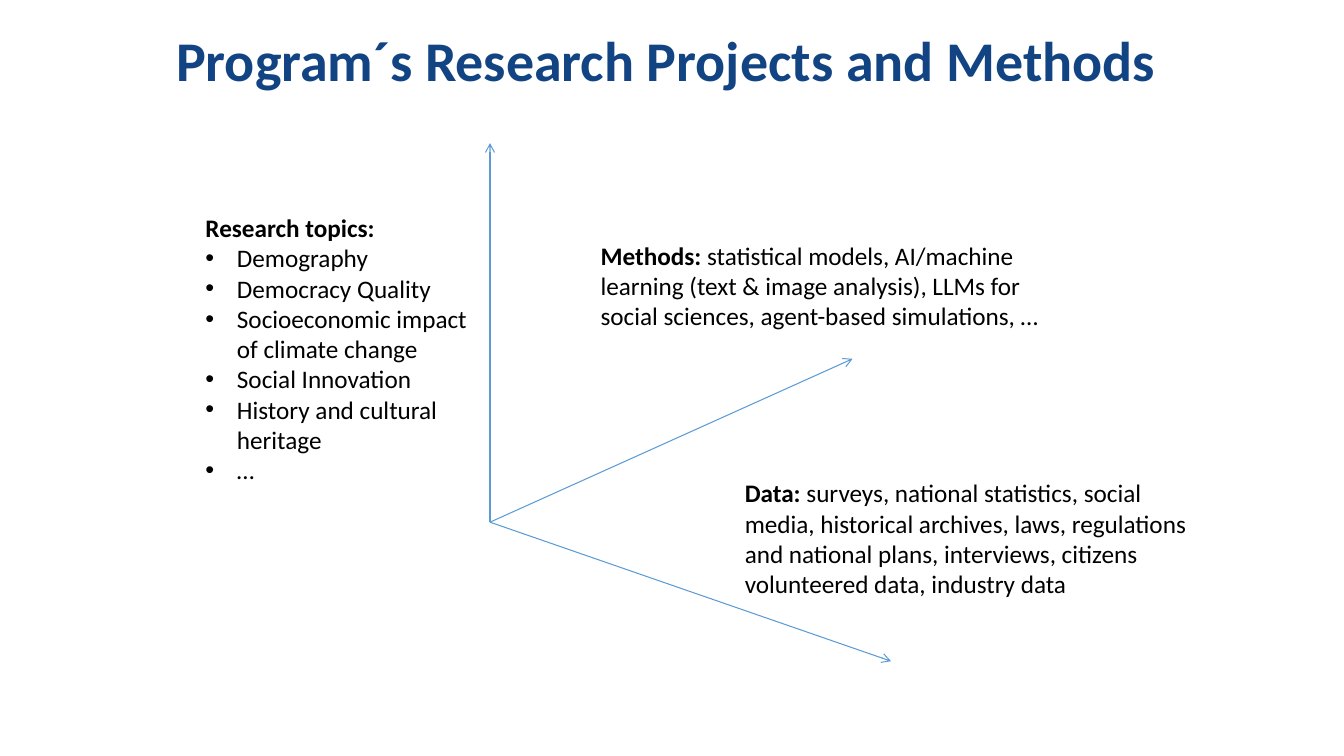
from dataclasses import dataclass

import pptx
import pptx.dml.color
import pptx.enum.shapes
import pptx.enum.text
import pptx.oxml
import pptx.oxml.ns
import pptx.util
from pptx.slide import Slide

Pt = pptx.util.Pt


@dataclass(frozen=True)
class Theme:
    font: str = "Calibri"
    title: str = "124484"
    text: str = "000000"
    line: str = "5B9BD5"
    big: float = 40
    body: float = 18
    thin: float = 0.75
    indent: float = 22.5


@dataclass(frozen=True)
class Para:
    bold: str = ""
    plain: str = ""
    dot: bool = False


@dataclass(frozen=True)
class Box:
    left: float
    top: float
    width: float
    height: float
    paras: list[Para]


THEME = Theme()
HUB = (350, 373)
TIPS = [(609, 256.3), (350, 102.2), (636.5, 472.3)]
TOPICS = [
    "Demography",
    "Democracy Quality",
    "Socioeconomic impact of climate change",
    "Social Innovation",
    "History and cultural heritage",
    "…",
]
TITLE = Box(0, 20.2, 960, 63.4, [Para("Program´s Research Projects and Methods ")])
NOTES = [
    Box(139.7, 148.3, 201.6, 203.8,
        [Para("Research topics:")] + [Para(plain=topic, dot=True) for topic in TOPICS]),
    Box(524.9, 337.7, 344.2, 94.3, [Para(
        "Data: ",
        "surveys, national statistics, social media, historical archives, laws, "
        "regulations and national plans, interviews, citizens volunteered data, "
        "industry data")]),
    Box(421.9, 167.8, 344.2, 72.7, [Para(
        "Methods: ",
        "statistical models, AI/machine learning (text & image analysis), "
        "LLMs for social sciences, agent-based simulations, …")]),
]


def add_tag(parent, tag: str, **attrs: str) -> None:
    node = pptx.oxml.parse_xml(f"<{tag} {pptx.oxml.ns.nsdecls('a')}/>")
    for name, value in attrs.items():
        node.set(name, value)
    parent.append(node)


def draw_box(slide: Slide, box: Box, size: float, tint: str, form: dict) -> None:
    shape = slide.shapes.add_textbox(
        Pt(box.left), Pt(box.top), Pt(box.width), Pt(box.height))
    frame = shape.text_frame
    frame.word_wrap = True
    for i, item in enumerate(box.paras):
        para = frame.add_paragraph() if i else frame.paragraphs[0]
        # Bullet with a hanging indent
        if item.dot:
            props = para._p.get_or_add_pPr()
            props.set("marL", str(Pt(THEME.indent)))
            props.set("indent", str(-Pt(THEME.indent)))
            add_tag(props, "a:buFont", typeface="Arial")
            add_tag(props, "a:buChar", char="•")
        for name, value in form.items():
            setattr(para, name, value)
        # Bold lead, then plain words
        for text, bold in ((item.bold, True), (item.plain, False)):
            if text:
                run = para.add_run()
                run.text = text
                look = {"name": THEME.font, "size": Pt(size), "bold": bold}
                for name, value in look.items():
                    setattr(run.font, name, value)
                run.font.color.rgb = pptx.dml.color.RGBColor.from_string(tint)


def draw_axis(slide: Slide, tip: tuple[float, float]) -> None:
    axis = slide.shapes.add_connector(
        pptx.enum.shapes.MSO_CONNECTOR.STRAIGHT, *map(Pt, HUB + tip))
    axis.line.color.rgb = pptx.dml.color.RGBColor.from_string(THEME.line)
    axis.line.width = Pt(THEME.thin)
    add_tag(axis.line._get_or_add_ln(), "a:tailEnd", type="arrow")
    add_tag(axis._element.spPr, "a:effectLst")


def main() -> None:
    deck = pptx.Presentation()
    deck.slide_width, deck.slide_height = Pt(960), Pt(540)
    slide = deck.slides.add_slide(deck.slide_layouts[6])

    # Title
    center = {"alignment": pptx.enum.text.PP_ALIGN.CENTER, "line_spacing": 0.9}
    draw_box(slide, TITLE, THEME.big, THEME.title, center)

    # Three axes from one hub
    for tip in TIPS:
        draw_axis(slide, tip)

    # Notes beside the axes
    for note in NOTES:
        draw_box(slide, note, THEME.body, THEME.text, {})

    deck.save("out.pptx")


if __name__ == "__main__":
    main()
